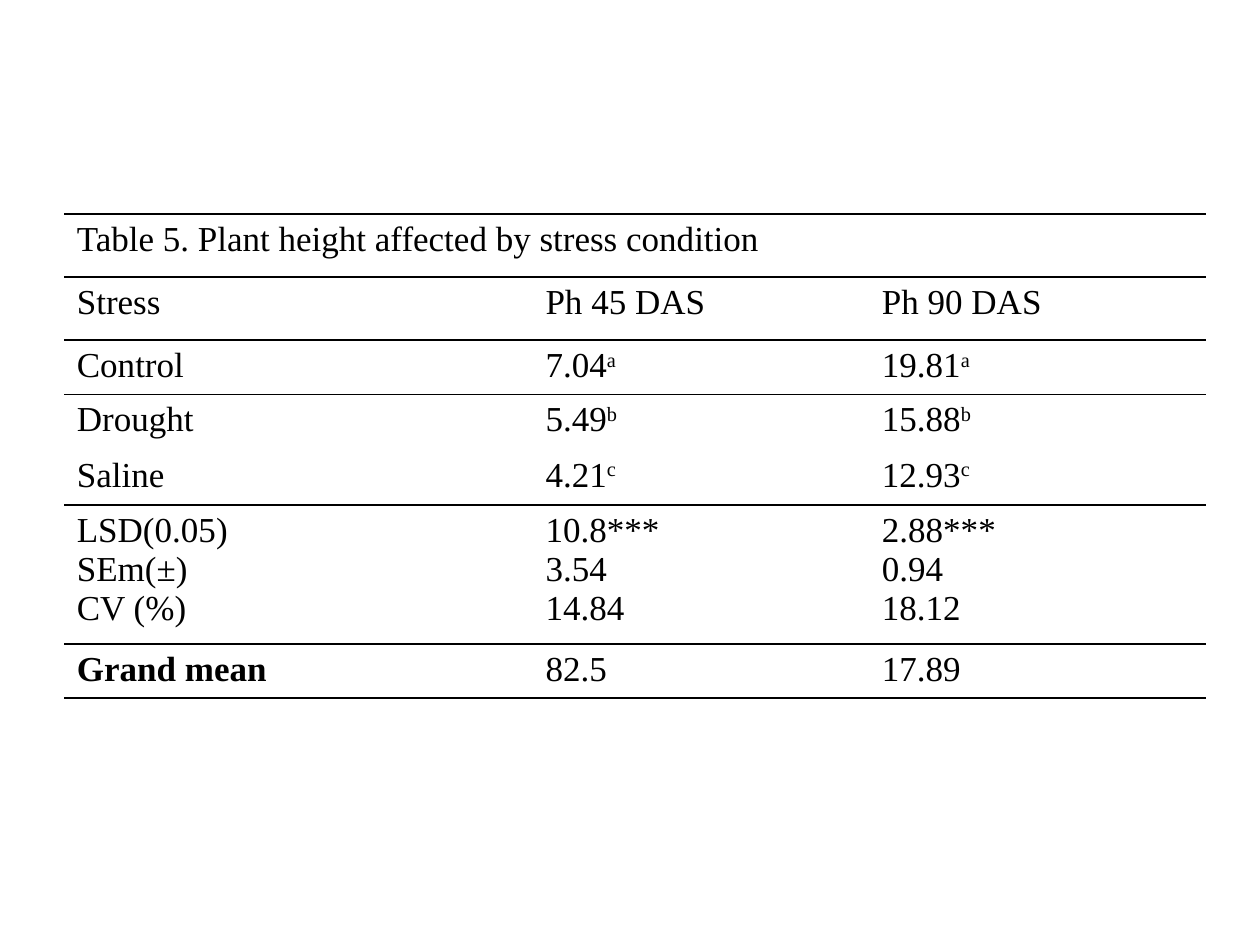
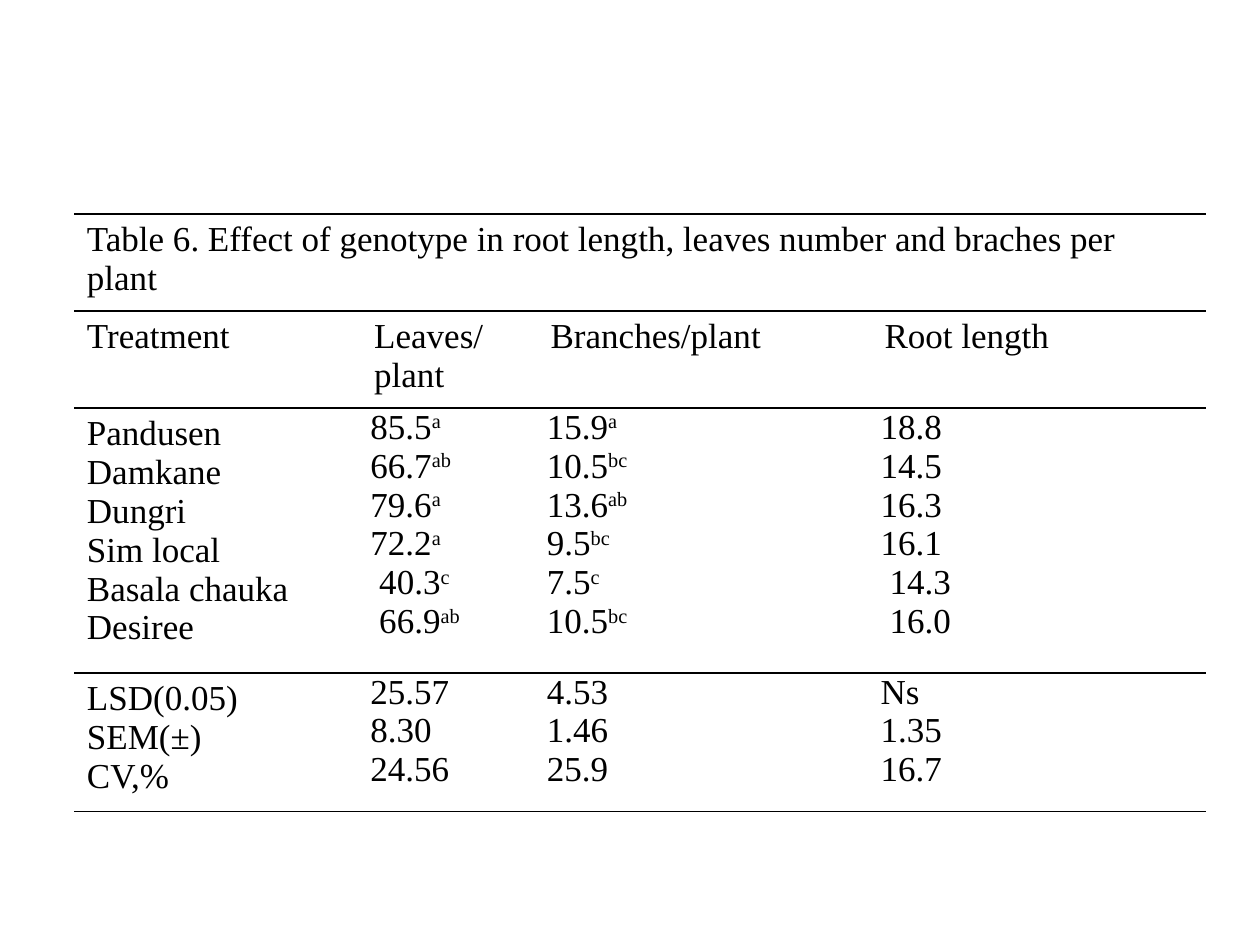
from lxml.etree import SubElement
from pptx import Presentation
from pptx.dml.color import RGBColor
from pptx.oxml.ns import qn
from pptx.util import Inches, Pt

FONT, SIZE, INK = "Times New Roman", 20, "000000"
PLAIN_STYLE = "{2D5ABB26-0587-4C30-8999-92F81FD0307C}"
TOP, INSET, TIGHT_INSET, INDENT = 1.7, 0.1, 0.07, 0.07

# "^" starts a superscript and ">" marks an indented value.
TABLES = [
    {
        "left": 0.51,
        "cols": [3.72, 2.67, 2.67],
        "heights": [0.5, 0.5, 0.43, 0.44, 0.44, 1.1, 0.43],
        "rules": {0, 1, 2, 5, 6, 7},
        "tight_rows": set(),
        "bold": {"Grand mean"},
        "rows": [
            [["Table 5. Plant height affected by stress condition"]],
            [["Stress"], ["Ph 45 DAS"], ["Ph 90 DAS"]],
            [["Control"], ["7.04^a"], ["19.81^a"]],
            [["Drought"], ["5.49^b"], ["15.88^b"]],
            [["Saline"], ["4.21^c"], ["12.93^c"]],
            [["LSD(0.05)", "SEm(±)", "CV (%)"],
             ["10.8***", "3.54", "14.84"],
             ["2.88***", "0.94", "18.12"]],
            [["Grand mean"], ["82.5"], ["17.89"]],
        ],
    },
    {
        "left": 0.59,
        "cols": [2.28, 1.4, 2.65, 2.65],
        "heights": [0.77, 0.77, 2.1, 1.1],
        "rules": {0, 1, 2, 3, 4},
        "tight_rows": {2, 3},
        "bold": set(),
        "rows": [
            [["Table 6. Effect of genotype in root length, leaves number and braches per plant"]],
            [["Treatment"], ["Leaves/plant"], ["Branches/plant"], ["Root length"]],
            [["Pandusen", "Damkane", "Dungri", "Sim local", "Basala chauka", "Desiree"],
             ["85.5^a", "66.7^ab", "79.6^a", "72.2^a", ">40.3^c", ">66.9^ab"],
             ["15.9^a", "10.5^bc", "13.6^ab", "9.5^bc", "7.5^c", "10.5^bc"],
             ["18.8", "14.5", "16.3", "16.1", ">14.3", ">16.0"]],
            [["LSD(0.05)", "SEM(±)", "CV,%"],
             ["25.57", "8.30", "24.56"],
             ["4.53", "1.46", "25.9"],
             ["Ns", "1.35", "16.7"]],
        ],
    },
]


def color(value):
    return RGBColor.from_string(value)


def add_rule(cell, side):
    ln = SubElement(cell._tc.get_or_add_tcPr(), qn(f"a:{side}"), w=str(Pt(1)))
    fill = SubElement(ln, qn("a:solidFill"))
    SubElement(fill, qn("a:srgbClr"), val=INK)


def write_line(p, line, bold):
    if line.startswith(">"):
        p._p.get_or_add_pPr().set("marL", str(Inches(INDENT)))
    value, _, mark = line.lstrip(">").partition("^")
    p.text = value
    if mark:
        r = p.add_run()
        r.text = mark
        r._r.get_or_add_rPr().set("baseline", "30000")
    for r in p.runs:
        r.font.name, r.font.size, r.font.bold = FONT, Pt(SIZE), bold
        r.font.color.rgb = color(INK)


def write_cell(cell, lines, tight, bold):
    cell.margin_left = cell.margin_right = Inches(TIGHT_INSET if tight else INSET)
    cell.margin_top = cell.margin_bottom = Inches(0 if tight else 0.05)
    tf = cell.text_frame
    tf.text = "\n".join(lines)
    for p, line in zip(tf.paragraphs, lines):
        write_line(p, line, line in bold)


def add_data_table(s, data):
    cols, heights, rows = data["cols"], data["heights"], data["rows"]
    frame = s.shapes.add_table(len(rows), len(cols), Inches(data["left"]), Inches(TOP),
                               Inches(sum(cols)), Inches(sum(heights)))
    table = frame.table
    table.first_row = table.horz_banding = False
    table._tbl.tblPr.find(qn("a:tableStyleId")).text = PLAIN_STYLE
    for col, width in zip(table.columns, cols):
        col.width = Inches(width)
    for row, height in zip(table.rows, heights):
        row.height = Inches(height)
    table.cell(0, 0).merge(table.cell(0, len(cols) - 1))
    for i, row in enumerate(rows):
        for j in range(len(cols)):
            cell = table.cell(i, j)
            for side, edge in (("lnT", i), ("lnB", i + 1)):
                if edge in data["rules"]:
                    add_rule(cell, side)
            cell.fill.background()
            if j < len(row):
                tight = j > 0 and i in data["tight_rows"]
                write_cell(cell, row[j], tight, data["bold"])


def main():
    prs = Presentation()
    prs.slide_width, prs.slide_height = Inches(10), Inches(7.5)
    for data in TABLES:
        s = prs.slides.add_slide(prs.slide_layouts[6])
        add_data_table(s, data)
    prs.save("out.pptx")


if __name__ == "__main__":
    main()
